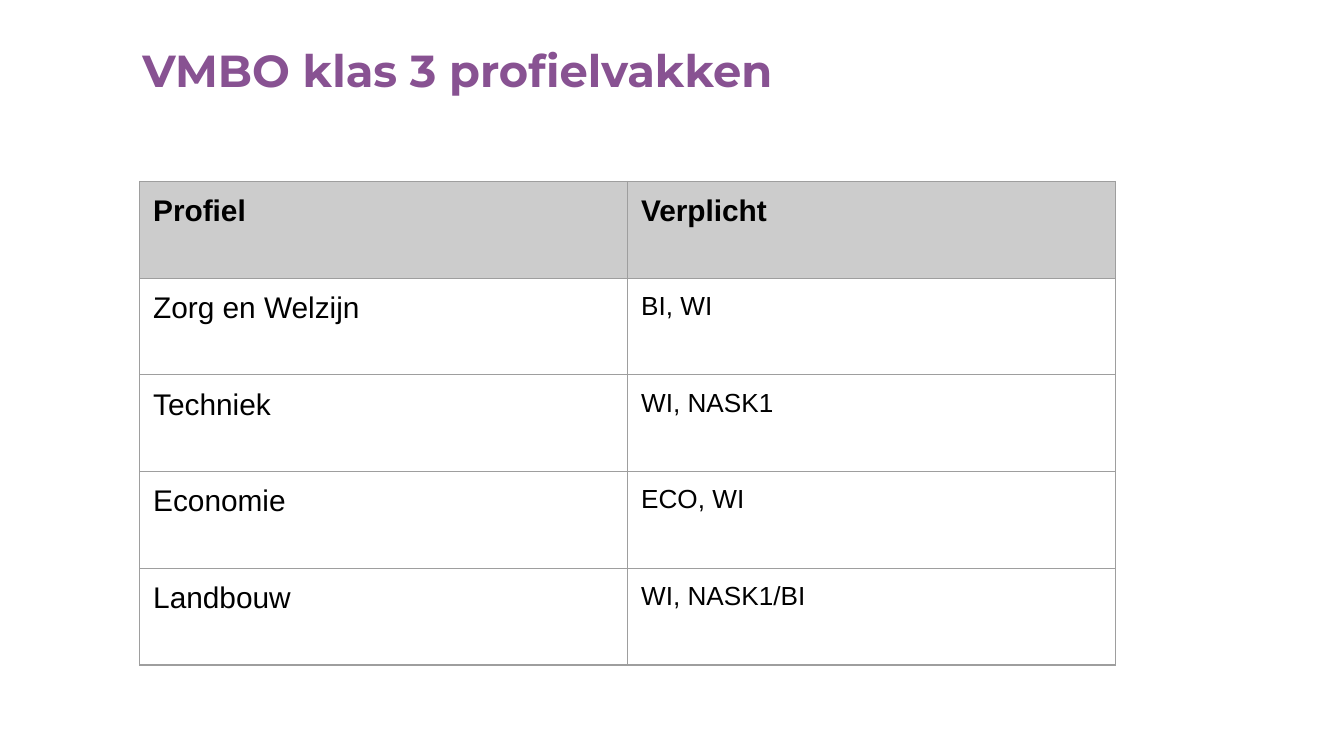
import pptx
import pptx.dml.color
import pptx.enum.text
import pptx.oxml.ns
import pptx.util
from lxml import etree
from pptx.util import Inches

COLORS = {"title": "885292", "text": "000000", "header": "CCCCCC", "border": "9E9E9E"}
INSET = Inches(0.1)
COLUMN_WIDTH = Inches(3.63)
ROW_HEIGHT = Inches(0.72)
PROFILES = [
    ("Profiel", "Verplicht"),
    ("Zorg en Welzijn", "BI, WI"),
    ("Techniek", "WI, NASK1"),
    ("Economie", "ECO, WI"),
    ("Landbouw", "WI, NASK1/BI"),
]


def rgb(name):
    return pptx.dml.color.RGBColor.from_string(COLORS[name])


def add_run(p, text, font, size, color, bold):
    r = p.add_run()
    r.text = text
    r.font.name = font
    r.font.size = pptx.util.Pt(size)
    r.font.color.rgb = rgb(color)
    r.font.bold = bold


def set_insets(target):
    """Give a cell or text frame the same inset on every side."""
    target.margin_left = target.margin_right = INSET
    target.margin_top = target.margin_bottom = INSET


def set_borders(cell):
    qn = pptx.oxml.ns.qn
    props = cell._tc.get_or_add_tcPr()
    for i, side in enumerate(("lnL", "lnR", "lnT", "lnB")):
        line = etree.Element(qn(f"a:{side}"), w=str(pptx.util.Pt(0.75)))
        fill = etree.SubElement(line, qn("a:solidFill"))
        etree.SubElement(fill, qn("a:srgbClr"), val=COLORS["border"])
        props.insert(i, line)


def add_title(s, text):
    sp = s.shapes.title
    sp.left, sp.top = Inches(0.96), Inches(0.06)
    sp.width, sp.height = Inches(8.22), Inches(0.92)
    tf = sp.text_frame
    set_insets(tf)
    tf.word_wrap = True
    tf.vertical_anchor = pptx.enum.text.MSO_ANCHOR.MIDDLE
    p = tf.paragraphs[0]
    p.alignment = pptx.enum.text.PP_ALIGN.LEFT
    add_run(p, text, "Montserrat", 24, "title", True)


def fill_cell(cell, text, size, header):
    set_insets(cell)
    if header:
        cell.fill.solid()
        cell.fill.fore_color.rgb = rgb("header")
    else:
        cell.fill.background()
    set_borders(cell)
    add_run(cell.text_frame.paragraphs[0], text, "Arial", size, "text", header)


def add_profile_table(s):
    rows, cols = len(PROFILES), len(PROFILES[0])
    table = s.shapes.add_table(
        rows, cols, Inches(1.04), Inches(1.35), COLUMN_WIDTH * cols, ROW_HEIGHT * rows
    ).table
    table.horz_banding = False
    for column in table.columns:
        column.width = COLUMN_WIDTH
    for i, values in enumerate(PROFILES):
        table.rows[i].height = ROW_HEIGHT
        for j, text in enumerate(values):
            size = 16 if i == 0 or j == 0 else 14
            fill_cell(table.cell(i, j), text, size, header=i == 0)


def main():
    prs = pptx.Presentation()
    prs.slide_width = Inches(10)
    prs.slide_height = prs.slide_width * 9 // 16
    s = prs.slides.add_slide(prs.slide_layouts[5])
    add_title(s, "VMBO klas 3 profielvakken")
    add_profile_table(s)
    prs.save("out.pptx")


if __name__ == "__main__":
    main()
